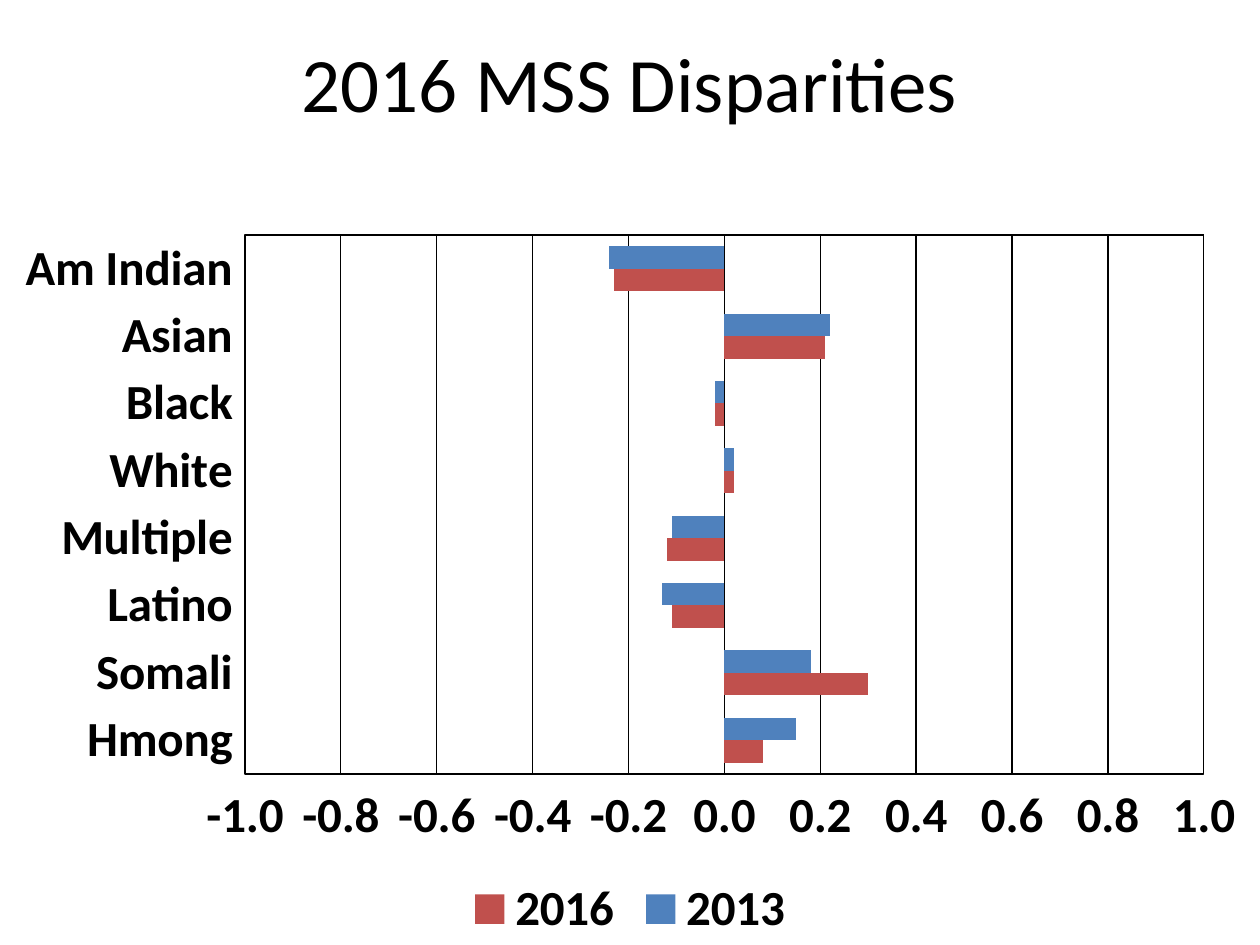
import pptx
import pptx.util
import pptx.chart.data
import pptx.dml.color
import pptx.enum.chart
import pptx.enum.text
import pptx.oxml

Pt = pptx.util.Pt
RGBColor = pptx.dml.color.RGBColor

TITLE = "2016 MSS Disparities"
GROUPS = ["Am Indian", "Asian", "Black", "White", "Multiple", "Latino", "Somali", "Hmong"]
BLACK = RGBColor(0x00, 0x00, 0x00)
BLUE = RGBColor(0x4F, 0x81, 0xBD)
RED = RGBColor(0xC0, 0x50, 0x4D)
YEARS = [
    ("2013", BLUE, [-0.24, 0.22, -0.02, 0.02, -0.11, -0.13, 0.18, 0.15]),
    ("2016", RED, [-0.23, 0.21, -0.02, 0.02, -0.12, -0.11, 0.3, 0.08]),
]
CHART_WIDTH, CHART_HEIGHT = 720, 416
PLOT_LAYOUT = {
    "x": 140 / CHART_WIDTH,
    "y": 8.3 / CHART_HEIGHT,
    "w": 548 / CHART_WIDTH,
    "h": 308 / CHART_HEIGHT,
}
FONT = "Calibri"
LINE_WIDTH = Pt(0.75)
NAMESPACES = (
    'xmlns:c="http://schemas.openxmlformats.org/drawingml/2006/chart" '
    'xmlns:a="http://schemas.openxmlformats.org/drawingml/2006/main"'
)


def style_font(font, size, bold):
    font.name = FONT
    font.size = Pt(size)
    font.bold = bold
    font.color.rgb = BLACK


def style_line(line):
    line.color.rgb = BLACK
    line.width = LINE_WIDTH


def add_title(page):
    box = page.shapes.add_textbox(Pt(36), Pt(21.6), Pt(648), Pt(50.4))
    frame = box.text_frame
    frame.word_wrap = True
    frame.vertical_anchor = pptx.enum.text.MSO_ANCHOR.MIDDLE
    para = frame.paragraphs[0]
    para.text = TITLE
    para.alignment = pptx.enum.text.PP_ALIGN.CENTER
    style_font(para.font, 44, False)


def frame_plot_area(chart):
    modes = '<c:layoutTarget val="inner"/><c:xMode val="edge"/><c:yMode val="edge"/>'
    places = "".join(f'<c:{key} val="{value:.4f}"/>' for key, value in PLOT_LAYOUT.items())
    layout = pptx.oxml.parse_xml(
        f"<c:layout {NAMESPACES}><c:manualLayout>{modes}{places}</c:manualLayout></c:layout>"
    )
    border = pptx.oxml.parse_xml(
        f'<c:spPr {NAMESPACES}><a:noFill/><a:ln w="{LINE_WIDTH}">'
        f'<a:solidFill><a:srgbClr val="{BLACK}"/></a:solidFill></a:ln></c:spPr>'
    )
    plot_area = chart.plots[0]._element.getparent()
    for old in plot_area.findall(layout.tag):
        plot_area.remove(old)
    plot_area.insert(0, layout)
    plot_area.append(border)


def label_every_second_group(axis):
    element = axis._element
    body = element.txPr.bodyPr
    body.set("rot", "0")
    body.set("vert", "horz")
    skip = pptx.oxml.parse_xml(f'<c:tickLblSkip {NAMESPACES} val="2"/>')
    offset = element.find(skip.tag.replace("tickLblSkip", "lblOffset"))
    offset.addnext(skip)


def add_disparity_chart(page):
    data = pptx.chart.data.CategoryChartData(number_format="0.0")
    data.categories = GROUPS
    for year, _, values in YEARS:
        data.add_series(year, values)
    chart = page.shapes.add_chart(
        pptx.enum.chart.XL_CHART_TYPE.BAR_CLUSTERED,
        Pt(0), Pt(126), Pt(CHART_WIDTH), Pt(CHART_HEIGHT), data,
    ).chart
    style_font(chart.font, 28, True)
    chart.has_title = False
    frame_plot_area(chart)

    plot = chart.plots[0]
    plot.gap_width = 100
    plot.overlap = 0
    plot.vary_by_categories = False
    for series, (_, color, _) in zip(plot.series, YEARS):
        series.invert_if_negative = False
        series.format.fill.solid()
        series.format.fill.fore_color.rgb = color

    labels = pptx.enum.chart.XL_TICK_LABEL_POSITION
    group_axis, value_axis = chart.category_axis, chart.value_axis
    for axis, position in ((group_axis, labels.LOW), (value_axis, labels.HIGH)):
        axis.tick_label_position = position
        axis.major_tick_mark = pptx.enum.chart.XL_TICK_MARK.NONE
        axis.minor_tick_mark = pptx.enum.chart.XL_TICK_MARK.NONE
        style_font(axis.tick_labels.font, 28, True)
        style_line(axis.format.line)
    group_axis.reverse_order = True
    group_axis.has_major_gridlines = False
    label_every_second_group(group_axis)
    value_axis.minimum_scale = -1
    value_axis.maximum_scale = 1
    value_axis.major_unit = 0.2
    value_axis.tick_labels.number_format = "0.0"
    value_axis.tick_labels.number_format_is_linked = False
    value_axis.has_major_gridlines = True
    style_line(value_axis.major_gridlines.format.line)

    chart.has_legend = True
    chart.legend.position = pptx.enum.chart.XL_LEGEND_POSITION.BOTTOM
    chart.legend.include_in_layout = False
    style_font(chart.legend.font, 28, True)


def main():
    deck = pptx.Presentation()
    deck.slide_width, deck.slide_height = Pt(720), Pt(540)
    page = deck.slides.add_slide(deck.slide_layouts[6])
    add_title(page)
    add_disparity_chart(page)
    deck.save("out.pptx")


if __name__ == "__main__":
    main()
